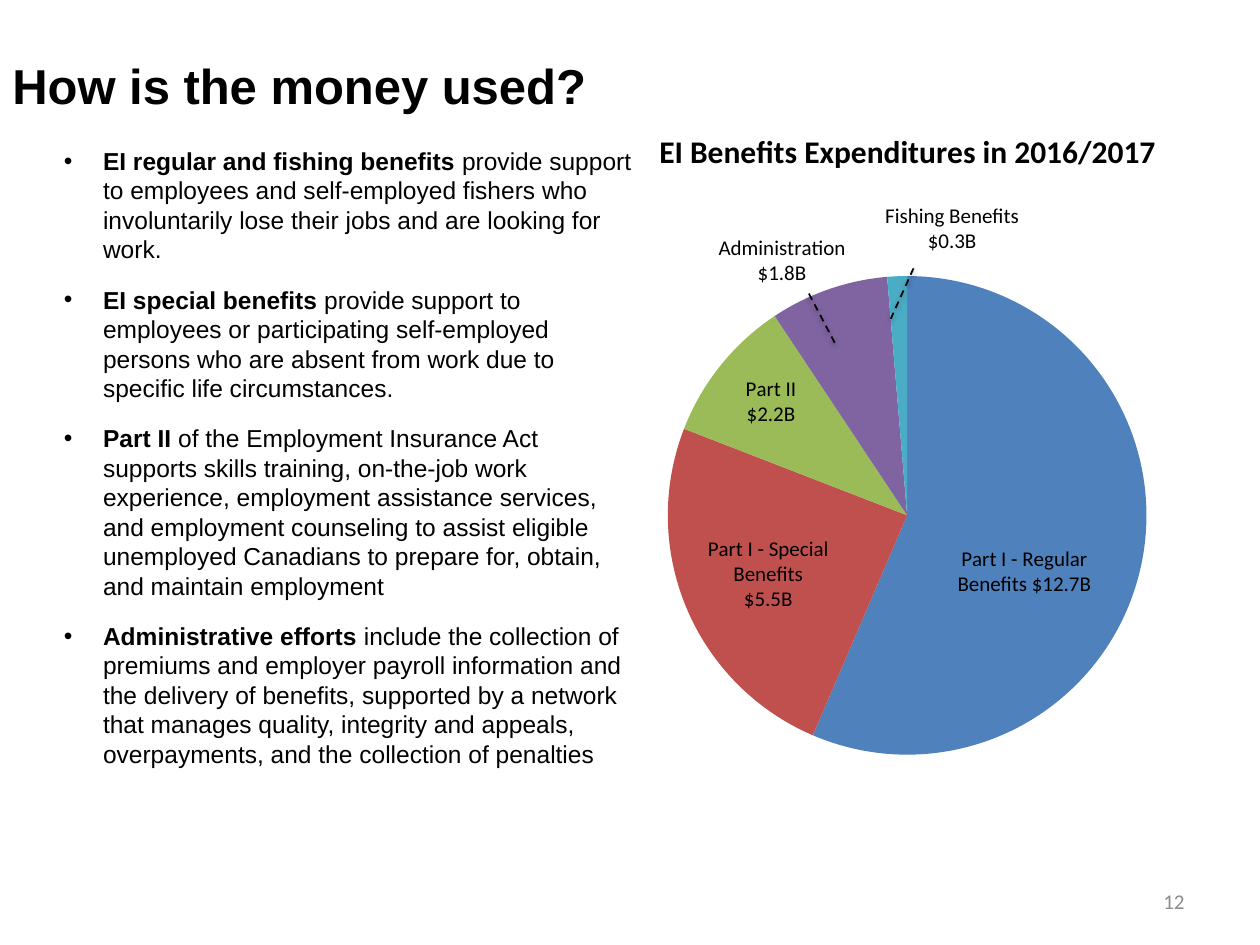
from lxml.etree import SubElement
from pptx import Presentation
from pptx.chart.data import CategoryChartData as ChartData
from pptx.dml.color import RGBColor
from pptx.enum.chart import XL_CHART_TYPE as Chart, XL_LABEL_POSITION as Spot
from pptx.enum.dml import MSO_LINE
from pptx.enum.shapes import MSO_CONNECTOR as Conn
from pptx.enum.text import MSO_ANCHOR as Anchor, PP_ALIGN as Align
from pptx.oxml import parse_xml
from pptx.oxml.ns import nsdecls, qn
from pptx.util import Inches, Pt

BLACK = RGBColor(0x00, 0x00, 0x00)
GREY = RGBColor(0x8C, 0x8C, 0x8C)
BLUE = RGBColor(0x4F, 0x81, 0xBD)
RED = RGBColor(0xC0, 0x50, 0x4D)
GREEN = RGBColor(0x9B, 0xBB, 0x59)
PURPLE = RGBColor(0x80, 0x64, 0xA2)
TEAL = RGBColor(0x4B, 0xAC, 0xC6)

POINTS = [
    ("EI regular and fishing benefits ",
     "provide support to employees and self-employed fishers who "
     "involuntarily lose their jobs and are looking for work."),
    ("EI special benefits ",
     "provide support to employees or participating self-employed persons "
     "who are absent from work due to specific life circumstances."),
    ("Part II ",
     "of the Employment Insurance Act supports skills training, on-the-job "
     "work experience, employment assistance services, and employment "
     "counseling to assist eligible unemployed Canadians to prepare for, "
     "obtain, and maintain employment"),
    ("Administrative efforts ",
     "include the collection of premiums and employer payroll information "
     "and the delivery of benefits, supported by a network that manages "
     "quality, integrity and appeals, overpayments, and the collection of "
     "penalties"),
]

# category, value in billions, colour, label, label shift as chart fractions
SLICES = [
    ("Regular Benefits", 12.7, BLUE, "Part I - Regular Benefits $12.7B", (0, 0.05)),
    ("Special Benefits", 5.5, RED, "Part I - Special Benefits\n$5.5B", (-0.04, 0.02)),
    ("Part II", 2.2, GREEN, "Part II\n$2.2B", (-0.06, -0.06)),
    ("Administrative", 1.8, PURPLE, "Administration\n$1.8B", (-0.12, -0.22)),
    ("Fishing Benefits", 0.3, TEAL, "Fishing Benefits\n$0.3B", (0.07, -0.26)),
]

LEADERS = [((7.25, 2.13), (7.07, 2.53)), ((6.42, 2.33), (6.63, 2.73))]


def style(font, size, name="Calibri", color=BLACK, bold=False):
    font.size, font.name, font.bold = Pt(size), name, bold
    font.color.rgb = color


def write(para, text, **fmt):
    run = para.add_run()
    run.text = text
    style(run.font, **fmt)


def add_box(slide, x, y, w, h, anchor=Anchor.MIDDLE):
    frame = slide.shapes.add_textbox(
        Inches(x), Inches(y), Inches(w), Inches(h)).text_frame
    frame.word_wrap = True
    frame.vertical_anchor = anchor
    return frame


def add_points(slide):
    frame = add_box(slide, 0.41, 1.11, 4.73, 5.08, Anchor.TOP)
    for i, (head, body) in enumerate(POINTS):
        para = frame.add_paragraph() if i else frame.paragraphs[0]
        para.space_before = Pt(6 if i else 0)
        para.space_after = Pt(6)
        props = para._p.get_or_add_pPr()
        props.set("marL", str(Inches(0.31)))
        props.set("indent", str(Inches(-0.31)))
        SubElement(props, qn("a:buFont"), typeface="Arial")
        SubElement(props, qn("a:buChar"), char="•")
        write(para, head, size=14, name="Arial", bold=True)
        write(para, body, size=14, name="Arial")


def place(node, index, **parts):
    """Give a chart part a manual layout as its child at index."""
    for old in node.findall(qn("c:layout")):
        node.remove(old)
    items = "".join(f'<c:{key} val="{val}"/>' for key, val in parts.items())
    node.insert(index, parse_xml(
        f'<c:layout {nsdecls("c")}><c:manualLayout>{items}'
        '</c:manualLayout></c:layout>'))


def add_label(point, text, shift):
    label = point.data_label
    frame = label.text_frame
    for i, line in enumerate(text.split("\n")):
        para = frame.add_paragraph() if i else frame.paragraphs[0]
        write(para, line, size=12)
    label.position = Spot.CENTER
    place(frame._txBody.getparent().getparent(), 1, x=shift[0], y=shift[1])


def add_pie(slide):
    data = ChartData(number_format="0.0")
    data.categories = [item[0] for item in SLICES]
    data.add_series("Series 1", [item[1] for item in SLICES])
    chart = slide.shapes.add_chart(
        Chart.PIE, Inches(4.45), Inches(0.98), Inches(5.67), Inches(5.1),
        data).chart
    style(chart.font, 10)
    chart.has_legend = False
    chart.has_title = True
    title = chart.chart_title
    write(title.text_frame.paragraphs[0], "EI Benefits Expenditures in 2016/2017",
          size=18, bold=True)
    place(title._element, 1, xMode="edge", yMode="edge", x=0.13, y=0)
    area = chart._chartSpace.chart.plotArea
    place(area, 0, layoutTarget="inner", xMode="edge", yMode="edge",
          x=0.15, y=0.22, w=0.67, h=0.78)
    plot = chart.plots[0]
    plot.vary_by_categories = True
    series = plot.series[0]
    labels = series.data_labels
    labels.show_value = labels.show_category_name = True
    style(labels.font, 12)
    for i, (_, _, color, text, shift) in enumerate(SLICES):
        point = series.points[i]
        point.format.fill.solid()
        point.format.fill.fore_color.rgb = color
        add_label(point, text, shift)
    for tag, val in (("c:showLeaderLines", "0"), ("c:showCatName", "1")):
        for flag in area.iter(qn(tag)):
            flag.set("val", val)


def add_leader(slide, start, end):
    line = slide.shapes.add_connector(
        Conn.STRAIGHT, *(Inches(n) for n in start + end))
    line.line.color.rgb = BLACK
    line.line.width = Pt(1)
    line.line.dash_style = MSO_LINE.DASH
    line._element.spPr.append(parse_xml(
        f'<a:effectLst {nsdecls("a")}>'
        f'<a:outerShdw blurRad="{Pt(3.1)}" dist="{Pt(1.6)}" dir="5400000" '
        'rotWithShape="0"><a:srgbClr val="000000"><a:alpha val="38000"/>'
        '</a:srgbClr></a:outerShdw></a:effectLst>'))


def main():
    deck = Presentation()
    deck.slide_width, deck.slide_height = Inches(10), Inches(7.5)
    slide = deck.slides.add_slide(deck.slide_layouts[6])
    number = add_box(slide, 7.17, 6.95, 2.33, 0.4).paragraphs[0]
    number.alignment = Align.RIGHT
    write(number, "12", size=12, color=GREY)
    title = add_box(slide, 0, 0.31, 9, 0.73).paragraphs[0]
    write(title, "How is the money used?", size=28, name="Arial", bold=True)
    add_points(slide)
    add_pie(slide)
    for start, end in LEADERS:
        add_leader(slide, start, end)
    deck.save("out.pptx")


if __name__ == "__main__":
    main()
